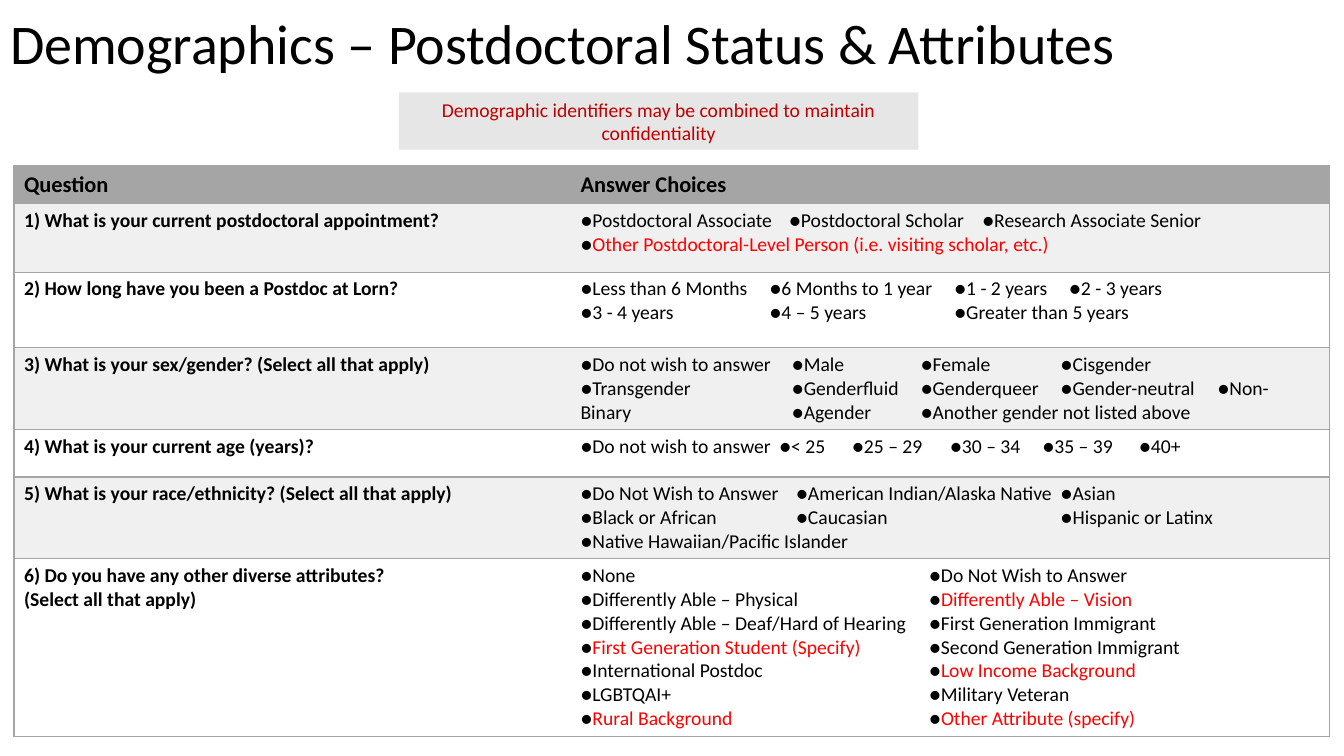
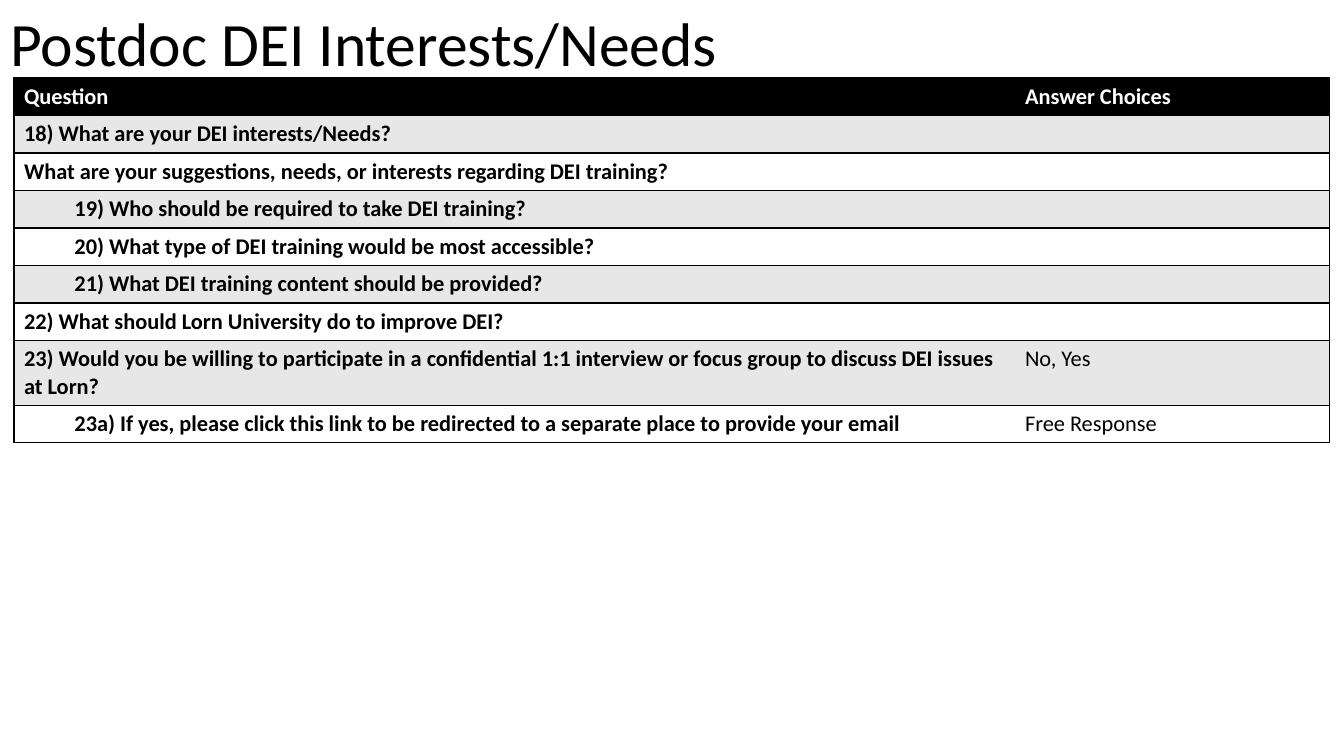
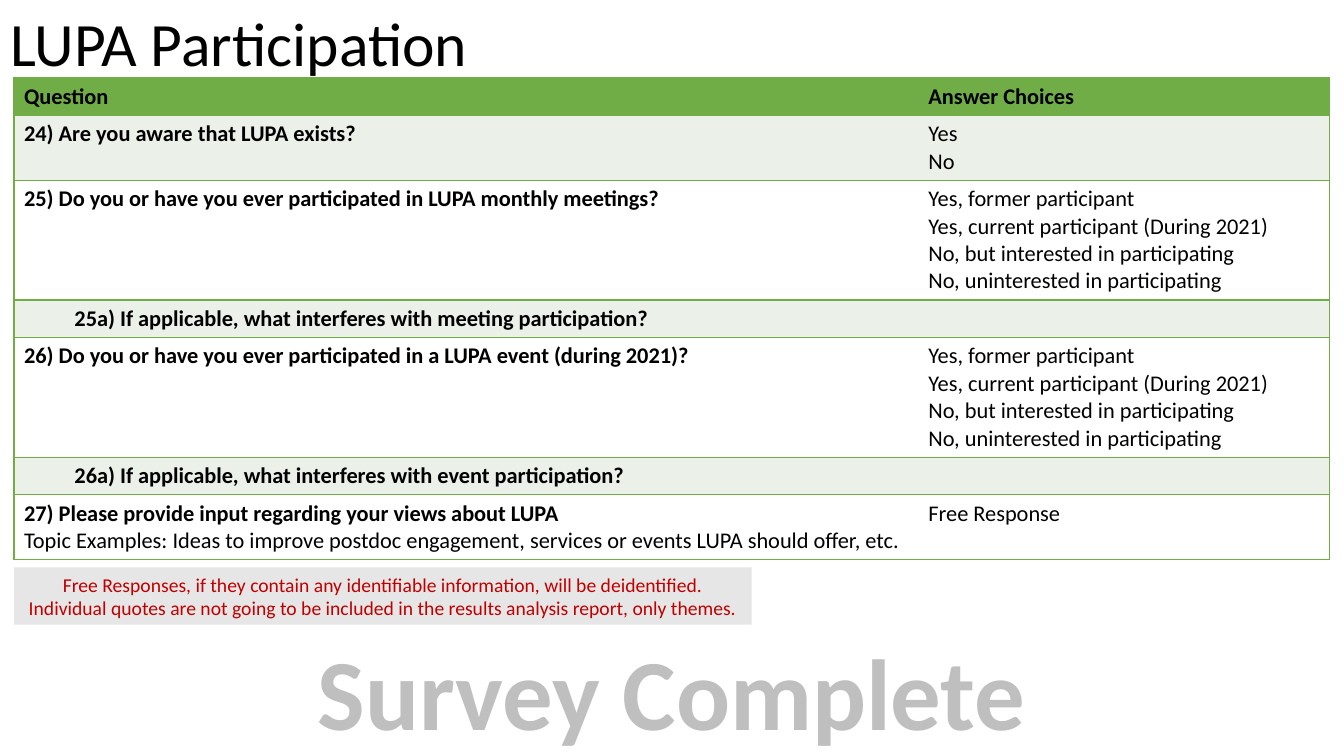
from dataclasses import dataclass

from lxml import etree
from pptx import Presentation
from pptx import util as u
from pptx.dml.color import RGBColor
from pptx.enum import shapes, text
from pptx.oxml import ns

Pt = u.Pt


# Theme: colours and type sizes
@dataclass(frozen=True)
class Theme:
    font: str = "Calibri"
    black: str = "000000"
    white: str = "FFFFFF"
    red: str = "FF0000"
    notice_text: str = "C00000"
    notice_fill: str = "E7E6E6"
    closing: str = "BFBFBF"
    title: int = 44
    long_title: int = 40
    body: int = 16
    small: int = 14
    closing_size: int = 72


T = Theme()


@dataclass(frozen=True)
class TableLook:
    header_fill: str
    band: str
    header_text: str = T.black
    size: int = T.body


GREY = TableLook("A5A5A5", "F0F0F0", size=T.small)
BLACK = TableLook("000000", "E7E7E7", T.white)
GREEN = TableLook("70AD47", "EBF1E9")

MARGIN = 10
TABLE_TOP = 55.5
INDENT = 36


# One survey question; text between bars is red, stops are tab positions
@dataclass(frozen=True)
class Row:
    question: str
    answers: tuple = ()
    height: float = 0
    sub: bool = False
    hint: str = ""
    stops: tuple = ()


DEMOGRAPHICS = [
    Row("1) What is your current postdoctoral appointment?",
        ("●Postdoctoral Associate\t●Postdoctoral Scholar\t●Research Associate Senior",
         "●|Other Postdoctoral-Level Person (i.e. visiting scholar, etc.)|"),
        height=49, stops=(149, 287)),
    Row("2) How long have you been a Postdoc at Lorn?",
        ("●Less than 6 Months\t●6 Months to 1 year\t●1 - 2 years\t●2 - 3 years",
         "●3 - 4 years\t●4 – 5 years\t●Greater than 5 years"),
        height=54, stops=(135, 267, 349)),
    Row("3) What is your sex/gender? (Select all that apply)",
        ("●Do not wish to answer\t●Male\t●Female\t●Cisgender",
         "●Transgender\t●Genderfluid\t●Genderqueer\t●Gender-neutral\t●Non-Binary"
         "\t●Agender\t●Another gender not listed above"),
        height=58, stops=(151, 243, 343, 455)),
    Row("4) What is your current age (years)?",
        ("●Do not wish to answer\t●< 25\t●25 – 29\t●30 – 34\t●35 – 39\t●40+",),
        height=34, stops=(142, 194, 264, 330, 399)),
    Row("5) What is your race/ethnicity? (Select all that apply)",
        ("●Do Not Wish to Answer\t●American Indian/Alaska Native\t●Asian",
         "●Black or African\t●Caucasian\t●Hispanic or Latinx",
         "●Native Hawaiian/Pacific Islander"),
        stops=(154, 343)),
    Row("6) Do you have any other diverse attributes?\n(Select all that apply)",
        ("●None\t●Do Not Wish to Answer",
         "●Differently Able – Physical\t●|Differently Able – Vision|",
         "●Differently Able – Deaf/Hard of Hearing\t●First Generation Immigrant",
         "●|First Generation Student (Specify)|\t●Second Generation Immigrant",
         "●International Postdoc\t●|Low Income Background|",
         "●LGBTQAI+\t●Military Veteran",
         "●|Rural Background|\t●|Other Attribute (specify)|"),
        stops=(249,)),
]

INTERESTS = [
    Row("18) What are your DEI interests/Needs?"),
    Row("What are your suggestions, needs, or interests regarding DEI training?"),
    Row("19) Who should be required to take DEI training?", sub=True),
    Row("20) What type of DEI training would be most accessible?", sub=True),
    Row("21) What DEI training content should be provided?", sub=True),
    Row("22) What should Lorn University do to improve DEI?"),
    Row("23) Would you be willing to participate in a confidential 1:1 interview "
        "or focus group to discuss DEI issues at Lorn?", ("No, Yes",), height=46),
    Row("23a) If yes, please click this link to be redirected to a separate place "
        "to provide your email", ("Free Response",), sub=True),
]

PARTICIPATION_LEVELS = (
    "Yes, former participant",
    "Yes, current participant (During 2021)",
    "No, but interested in participating",
    "No, uninterested in participating",
)
PARTICIPATION = [
    Row("24) Are you aware that LUPA exists?", ("Yes", "No")),
    Row("25) Do you or have you ever participated in LUPA monthly meetings?",
        PARTICIPATION_LEVELS),
    Row("25a) If applicable, what interferes with meeting participation?", sub=True),
    Row("26) Do you or have you ever participated in a LUPA event (during 2021)?",
        PARTICIPATION_LEVELS),
    Row("26a) If applicable, what interferes with event participation?", sub=True),
    Row("27) Please provide input regarding your views about LUPA", ("Free Response",),
        hint="Topic Examples: Ideas to improve postdoc engagement, services or events "
             "LUPA should offer, etc."),
]


# Text helpers
def rgb(color):
    return RGBColor.from_string(color)


def add_run(p, words, size, color=T.black, bold=False):
    r = p.add_run()
    r.text = words
    for name, value in {"name": T.font, "size": Pt(size), "bold": bold}.items():
        setattr(r.font, name, value)
    r.font.color.rgb = rgb(color)


def write_lines(tf, lines, size, color=T.black, bold=False, align=text.PP_ALIGN.LEFT):
    for i, line in enumerate(lines):
        p = tf.paragraphs[0] if i == 0 else tf.add_paragraph()
        p.alignment = align
        for n, part in enumerate(line.split("|")):
            if part:
                add_run(p, part, size, T.red if n % 2 else color, bold)


# Paragraph and cell XML
def set_indent(p, points):
    p._p.get_or_add_pPr().set("marL", str(Pt(points)))


def set_tabs(p, stops):
    tabs = etree.SubElement(p._p.get_or_add_pPr(), ns.qn("a:tabLst"))
    for stop in stops:
        etree.SubElement(tabs, ns.qn("a:tab"), pos=str(Pt(stop)), algn="l")


def set_borders(cell, color, sides):
    tc_pr = cell._tc.get_or_add_tcPr()
    for side in "LRTB":
        ln = etree.SubElement(tc_pr, ns.qn(f"a:ln{side}"), w=str(Pt(1)))
        if side in sides:
            fill = etree.SubElement(ln, ns.qn("a:solidFill"))
            etree.SubElement(fill, ns.qn("a:srgbClr"), val=color)
        else:
            etree.SubElement(ln, ns.qn("a:noFill"))


# Slide elements
def style_layout(prs):
    layout = prs.slide_layouts.get_by_name("Title Only")
    title = layout.placeholders[0]
    box = {"left": 0, "top": 0, "width": prs.slide_width, "height": Pt(66)}
    for name, value in box.items():
        setattr(title, name, value)
    return layout


def add_titled_slide(prs, layout, words, size=T.title):
    s = prs.slides.add_slide(layout)
    tf = s.shapes.title.text_frame
    tf.auto_size = text.MSO_AUTO_SIZE.NONE
    tf.vertical_anchor = text.MSO_ANCHOR.MIDDLE
    write_lines(tf, [words], size)
    tf.paragraphs[0].line_spacing = 0.9
    return s


def row_height(row, size):
    lines = max(len(row.answers), row.question.count("\n") + 1 + bool(row.hint))
    return row.height or 7.2 + round(lines * size * 1.22, 1)


def add_survey_table(s, top, widths, rows, look):
    heights = [27] + [row_height(row, look.size) for row in rows]
    frame = s.shapes.add_table(len(heights), 2, Pt(MARGIN), Pt(top),
                               Pt(sum(widths)), Pt(sum(heights)))
    table = frame.table
    table.first_row = table.horz_banding = False
    for column, width in zip(table.columns, widths):
        column.width = Pt(width)
    for table_row, height in zip(table.rows, heights):
        table_row.height = Pt(height)

    # Fills and borders
    for r in range(len(heights)):
        fill = look.header_fill if r == 0 else look.band if r % 2 else T.white
        for c, sides in enumerate(("LTB", "RTB")):
            cell = table.cell(r, c)
            set_borders(cell, look.header_fill, sides)
            cell.fill.solid()
            cell.fill.fore_color.rgb = rgb(fill)

    # Header and questions
    for c, heading in enumerate(("Question", "Answer Choices")):
        write_lines(table.cell(0, c).text_frame, [heading], T.body,
                    look.header_text, bold=True)
    for r, row in enumerate(rows, 1):
        question, answer = table.cell(r, 0).text_frame, table.cell(r, 1)
        write_lines(question, row.question.split("\n"), look.size, bold=True)
        if row.sub:
            set_indent(question.paragraphs[0], INDENT)
        if row.hint:
            add_run(question.add_paragraph(), row.hint, look.size)
        write_lines(answer.text_frame, row.answers, look.size)
        if row.stops:
            for p in answer.text_frame.paragraphs:
                set_tabs(p, row.stops)
        if not row.answers:
            answer.margin_top = answer.margin_bottom = 0


def add_notice(s, left, top, width, lines):
    sp = s.shapes.add_shape(shapes.MSO_SHAPE.RECTANGLE, Pt(left), Pt(top),
                            Pt(width), Pt(41))
    sp.shadow.inherit = False
    sp.fill.solid()
    sp.fill.fore_color.rgb = rgb(T.notice_fill)
    sp.line.fill.background()
    sp.text_frame.word_wrap = True
    write_lines(sp.text_frame, lines, T.small, T.notice_text,
                align=text.PP_ALIGN.CENTER)


def add_closing(s, words):
    tf = s.shapes.add_textbox(Pt(208), Pt(446.4), Pt(543.6), Pt(94.3)).text_frame
    tf.word_wrap = True
    write_lines(tf, [words], T.closing_size, T.closing, bold=True,
                align=text.PP_ALIGN.CENTER)


def main():
    prs = Presentation()
    prs.slide_width, prs.slide_height = Pt(960), Pt(540)
    layout = style_layout(prs)

    # Demographics
    s = add_titled_slide(prs, layout, "Demographics – Postdoctoral Status & Attributes",
                         T.long_title)
    add_survey_table(s, 118.5, (397.5, 542), DEMOGRAPHICS, GREY)
    add_notice(s, 285, 66, 371,
               ["Demographic identifiers may be combined to maintain confidentiality"])

    # Interests and needs
    s = add_titled_slide(prs, layout, "Postdoc DEI Interests/Needs")
    add_survey_table(s, TABLE_TOP, (715, 224.5), INTERESTS, BLACK)

    # Participation
    s = add_titled_slide(prs, layout, "LUPA Participation")
    add_survey_table(s, TABLE_TOP, (646, 293.5), PARTICIPATION, GREEN)
    add_closing(s, "Survey Complete")
    add_notice(s, MARGIN, 405.3, 527, [
        "Free Responses, if they contain any identifiable information, will be deidentified.",
        "Individual quotes are not going to be included in the results analysis report, "
        "only themes.",
    ])

    prs.save("out.pptx")


if __name__ == "__main__":
    main()
